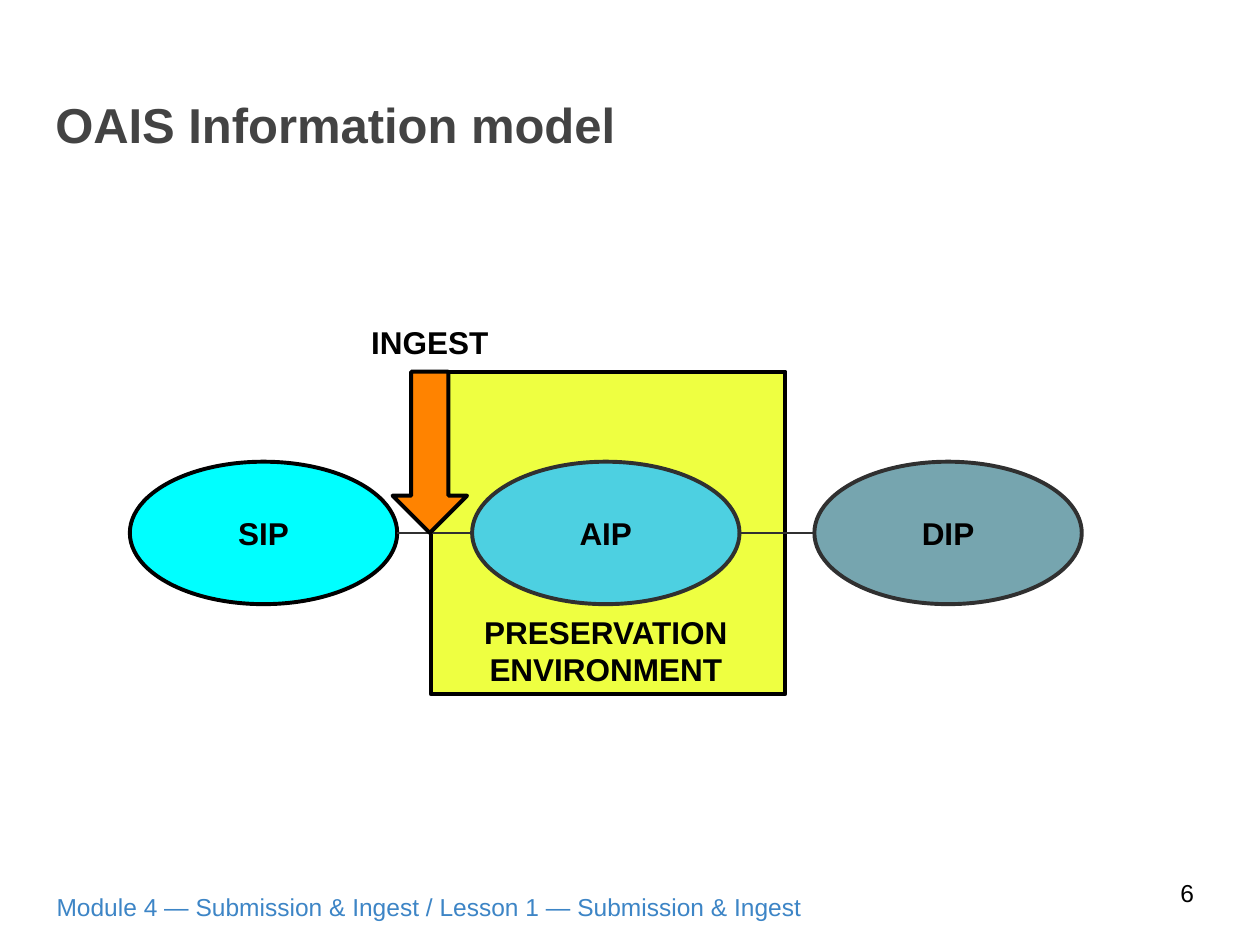
from dataclasses import dataclass

from lxml.etree import SubElement
from pptx import Presentation
from pptx.dml.color import RGBColor as RGB
from pptx.enum.shapes import MSO_CONNECTOR, MSO_SHAPE as Shape
from pptx.enum.text import MSO_ANCHOR as Anchor, PP_ALIGN as Align
from pptx.oxml.ns import qn
from pptx.util import Pt


@dataclass(frozen=True)
class Theme:
    font: str = "Arial"
    title_size: int = 28
    label_size: int = 18
    footer_size: int = 14
    outline: float = 2.25
    hairline: float = 0.75
    inset: float = 7.2
    black: str = "000000"
    heading: str = "434343"
    charcoal: str = "303030"
    footer: str = "3D85C6"
    environment: str = "EEFF41"
    ingest: str = "FF8300"
    sip: str = "00FFFF"
    aip: str = "4DD0E1"
    dip: str = "76A5AF"


THEME = Theme()


def write(shape, lines, size, color, bold=False, align=Align.LEFT, anchor=Anchor.TOP):
    frame = shape.text_frame
    frame.word_wrap = True
    frame.vertical_anchor = anchor
    frame.margin_left = frame.margin_right = Pt(THEME.inset)
    frame.margin_top = frame.margin_bottom = Pt(THEME.inset)
    frame.text = "\n".join(lines)
    for para in frame.paragraphs:
        para.alignment = align
        para.font.name = THEME.font
        para.font.size = Pt(size)
        para.font.bold = bold
        para.font.color.rgb = RGB.from_string(color)


def write_label(shape, *lines):
    write(shape, lines, THEME.label_size, THEME.black, True, Align.CENTER, Anchor.MIDDLE)


def add_text_box(page, box):
    return page.shapes.add_textbox(*map(Pt, box))


def add_outlined(page, kind, box, fill, line=THEME.black):
    shape = page.shapes.add_shape(kind, *map(Pt, box))
    shape.shadow.inherit = False
    shape.fill.solid()
    shape.fill.fore_color.rgb = RGB.from_string(fill)
    shape.line.color.rgb = RGB.from_string(line)
    shape.line.width = Pt(THEME.outline)
    return shape


def add_link(page, start, end, y):
    link = page.shapes.add_connector(MSO_CONNECTOR.STRAIGHT, Pt(start), Pt(y), Pt(end), Pt(y))
    link.line.color.rgb = RGB.from_string(THEME.charcoal)
    link.line.width = Pt(THEME.hairline)
    SubElement(link._element.spPr, qn("a:effectLst"))


def add_title(page, box):
    write(add_text_box(page, box), ["OAIS Information model"],
          THEME.title_size, THEME.heading, bold=True)


def add_footer(page, box):
    """Put the lesson line at the left of the box and the page number at its right."""
    left, top, width, height = box
    number = add_text_box(page, (left + width - 43.2, top, 43.2, height))
    write(number, ["6"], THEME.footer_size, THEME.black, anchor=Anchor.MIDDLE)
    lesson = add_text_box(page, (left, top + 13, 651.6, 28.8))
    write(lesson, ["Module 4 — Submission & Ingest / Lesson 1 — Submission & Ingest"],
          THEME.footer_size, THEME.footer)


def add_packages(page, box):
    """Spread the three packages evenly over the box and link neighbours."""
    packages = [
        ("SIP", THEME.sip, THEME.black),
        ("AIP", THEME.aip, THEME.charcoal),
        ("DIP", THEME.dip, THEME.charcoal),
    ]
    left, top, width, height = box
    oval_width = 152.8
    pitch = (width - oval_width) / (len(packages) - 1)
    for i, (name, fill, line) in enumerate(packages):
        x = left + i * pitch
        oval = add_outlined(page, Shape.OVAL, (x, top, oval_width, height), fill, line)
        write_label(oval, name)
        if i:
            add_link(page, x - pitch + oval_width, x, top + height / 2)


def add_ingest(page, box):
    """Set the label at the top of the box and the arrow centred below it."""
    left, top, width, height = box
    label_height, arrow_width = 34.6, 42.6
    arrow_box = (left + (width - arrow_width) / 2, top + label_height,
                 arrow_width, height - label_height)
    add_outlined(page, Shape.DOWN_ARROW, arrow_box, THEME.ingest)
    write_label(add_text_box(page, (left, top, width, label_height)), "INGEST")


def add_model(page, box):
    """Draw the environment in the box, with the packages across its middle."""
    left, top, width, height = box
    middle = top + height / 2
    add_outlined(page, Shape.RECTANGLE, box, THEME.environment)
    add_packages(page, (left - 172, middle - 40.7, 544, 81.4))
    add_ingest(page, (left - 64.4, top - 34.6, 127.6, middle - top + 34.6))
    caption = add_text_box(page, (left + 11.4, top + height - 42.4, 177.2, 34.6))
    write_label(caption, "PRESERVATION", "ENVIRONMENT")


def main():
    deck = Presentation()
    deck.slide_width, deck.slide_height = Pt(720), Pt(540)
    page = deck.slides.add_slide(deck.slide_layouts[6])
    add_model(page, (246.2, 212.4, 202.6, 184.3))
    add_title(page, (24.5, 46.8, 671, 59.8))
    add_footer(page, (25.2, 489.6, 685.4, 41))
    deck.save("out.pptx")


if __name__ == "__main__":
    main()
